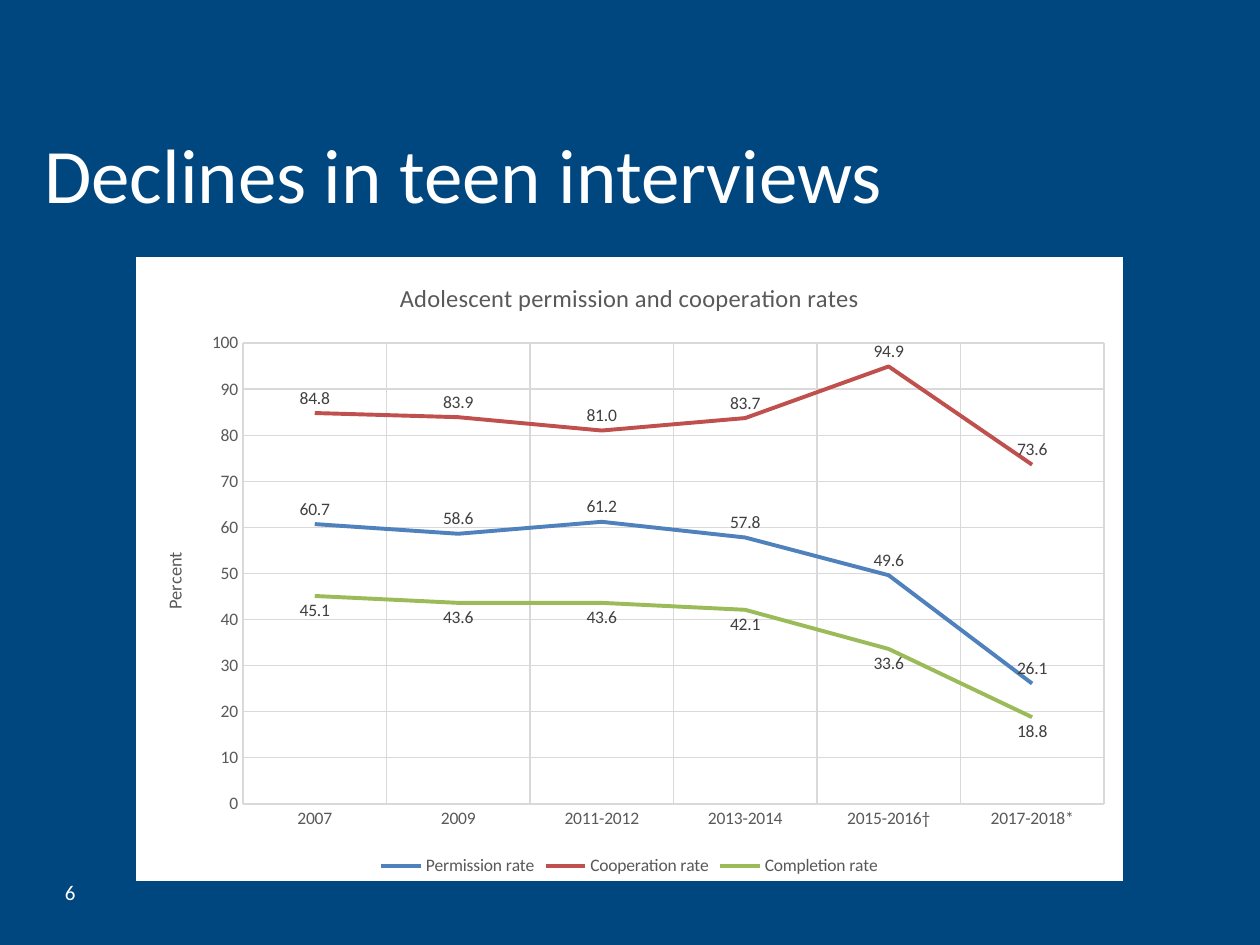
from dataclasses import dataclass

from lxml import etree
from pptx import Presentation
from pptx.chart.data import CategoryChartData
from pptx.dml.color import RGBColor
from pptx.enum.chart import XL_CHART_TYPE, XL_LABEL_POSITION, XL_LEGEND_POSITION, XL_TICK_MARK
from pptx.enum.text import MSO_ANCHOR, PP_ALIGN
from pptx.oxml import parse_xml
from pptx.oxml.ns import nsdecls, qn
from pptx.util import Emu, Pt

PX = 914400 // 126


@dataclass(frozen=True)
class Theme:
    font: str = "Calibri"
    background: str = "00477F"
    paper: str = "FFFFFF"
    muted: str = "595959"
    value: str = "404040"
    grid: str = "D9D9D9"
    heading_size: float = 44
    number_size: float = 12
    chart_title_size: float = 14
    axis_title_size: float = 10.5
    chart_size: float = 10
    grid_width: float = 0.75
    series_width: float = 2.25


THEME = Theme()
PERIODS = ["2007", "2009", "2011-2012", "2013-2014", "2015-2016†", "2017-2018*"]
RATES = [
    ("Permission rate", [60.7, 58.6, 61.2, 57.8, 49.6, 26.1], "4F81BD", XL_LABEL_POSITION.ABOVE),
    ("Cooperation rate", [84.8, 83.9, 81.0, 83.7, 94.9, 73.6], "C0504D", XL_LABEL_POSITION.ABOVE),
    ("Completion rate", [45.1, 43.6, 43.6, 42.1, 33.6, 18.8], "9BBB59", XL_LABEL_POSITION.BELOW),
]


def px(*lengths):
    return [Emu(length * PX) for length in lengths]


def style_font(font, size, color):
    font.name = THEME.font
    font.size = Pt(size)
    font.bold = False
    font.color.rgb = RGBColor.from_string(color)


def style_line(line, color, width):
    line.color.rgb = RGBColor.from_string(color)
    line.width = Pt(width)


def add_label(slide, box, wording, size, align):
    frame = slide.shapes.add_textbox(*px(*box)).text_frame
    frame.word_wrap = True
    frame.vertical_anchor = MSO_ANCHOR.MIDDLE
    frame.text = wording
    paragraph = frame.paragraphs[0]
    paragraph.alignment = align
    style_font(paragraph.runs[0].font, size, THEME.paper)


def write_title(owner, wording, size):
    frame = owner.text_frame
    frame.text = wording
    style_font(frame.paragraphs[0].runs[0].font, size, THEME.muted)


def style_axes(chart):
    for axis in (chart.category_axis, chart.value_axis):
        axis.major_tick_mark = axis.minor_tick_mark = XL_TICK_MARK.NONE
        axis.has_major_gridlines = True
        style_line(axis.major_gridlines.format.line, THEME.grid, THEME.grid_width)
        style_font(axis.tick_labels.font, THEME.chart_size, THEME.muted)
    style_line(chart.category_axis.format.line, THEME.grid, THEME.grid_width)
    percent = chart.value_axis
    percent.format.line.fill.background()
    percent.minimum_scale, percent.maximum_scale, percent.major_unit = 0, 100, 10
    percent.tick_labels.number_format = "0"
    percent.tick_labels.number_format_is_linked = False
    write_title(percent.axis_title, "Percent", THEME.axis_title_size)


def style_rates(chart):
    for rate, (_, _, color, position) in zip(chart.plots[0].series, RATES):
        rate.smooth = False
        style_line(rate.format.line, color, THEME.series_width)
        labels = rate.data_labels
        labels.show_value = True
        labels.position = position
        labels.number_format = "#,##0.0"
        labels.number_format_is_linked = False
        style_font(labels.font, THEME.chart_size, THEME.value)


def place_plot(chart, box, plot):
    left, top, width, height = box
    shares = {
        "x": (plot[0] - left) / width,
        "y": (plot[1] - top) / height,
        "w": plot[2] / width,
        "h": plot[3] / height,
    }
    area = chart.element.find(".//" + qn("c:plotArea"))
    for old in area.findall(qn("c:layout")):
        area.remove(old)
    layout = etree.Element(qn("c:layout"))
    manual = etree.SubElement(layout, qn("c:manualLayout"))
    settings = {"layoutTarget": "inner", "xMode": "edge", "yMode": "edge", **shares}
    for tag, setting in settings.items():
        etree.SubElement(manual, qn("c:" + tag)).set("val", str(setting))
    area.insert(0, layout)


def fill_chart(chart):
    chart.element.find(qn("c:chart")).addnext(parse_xml(
        f'<c:spPr {nsdecls("c", "a")}><a:solidFill><a:srgbClr val="{THEME.paper}"/>'
        "</a:solidFill><a:ln><a:noFill/></a:ln></c:spPr>"
    ))


def add_rates_chart(slide, box):
    rates = CategoryChartData(number_format="0.0")
    rates.categories = PERIODS
    for name, values, _, _ in RATES:
        rates.add_series(name, values)
    chart = slide.shapes.add_chart(XL_CHART_TYPE.LINE, *px(*box), rates).chart
    style_font(chart.font, THEME.chart_size, "000000")
    chart.plots[0].vary_by_categories = False
    chart.has_title = True
    write_title(chart.chart_title, "Adolescent permission and cooperation rates", THEME.chart_title_size)
    chart.has_legend = True
    chart.legend.position = XL_LEGEND_POSITION.BOTTOM
    chart.legend.include_in_layout = False
    style_font(chart.legend.font, THEME.chart_size, THEME.muted)
    style_axes(chart)
    style_rates(chart)
    left, top, width, height = box
    place_plot(chart, box, (left + 107, top + 86, width - 126, height - 163))
    fill_chart(chart)


def build_slide(deck):
    slide = deck.slides.add_slide(deck.slide_layouts[6])
    slide.background.fill.solid()
    slide.background.fill.fore_color.rgb = RGBColor.from_string(THEME.background)
    add_label(slide, (32, 94, 1197, 158), "Declines in teen interviews", THEME.heading_size, PP_ALIGN.LEFT)
    add_label(slide, (24, 867, 64, 50), "6", THEME.number_size, PP_ALIGN.RIGHT)
    add_rates_chart(slide, (136, 257, 987, 624))


def main():
    deck = Presentation()
    deck.slide_width, deck.slide_height = px(1260, 945)
    build_slide(deck)
    deck.save("out.pptx")


if __name__ == "__main__":
    main()
